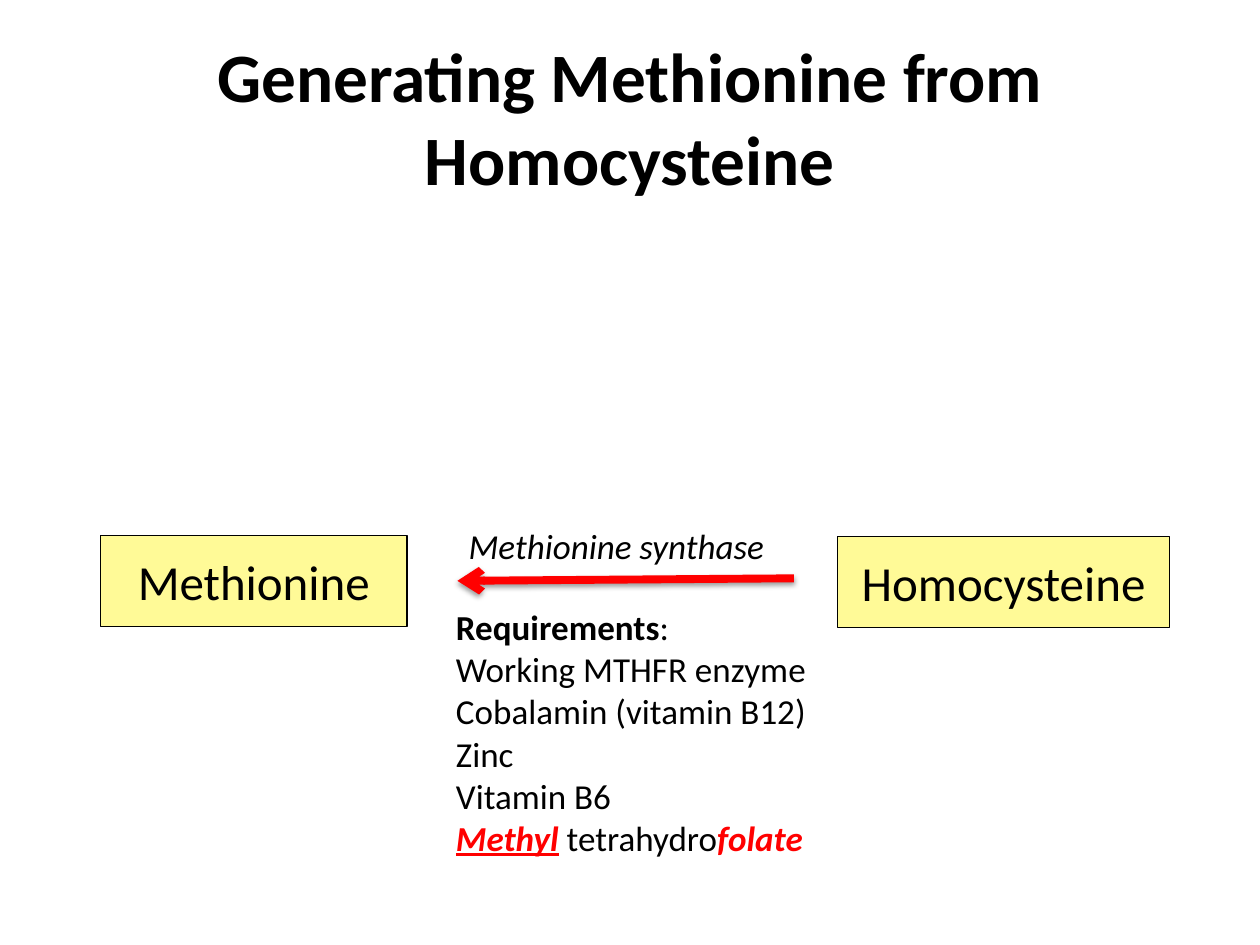
from lxml import etree
from pptx import Presentation
from pptx.dml.color import RGBColor
from pptx.enum.shapes import MSO_CONNECTOR, MSO_SHAPE
from pptx.enum.text import MSO_ANCHOR, PP_ALIGN
from pptx.oxml import parse_xml
from pptx.oxml.ns import nsdecls, qn
from pptx.util import Inches, Pt

BLACK = RGBColor(0x00, 0x00, 0x00)
RED = RGBColor(0xFF, 0x00, 0x00)
YELLOW = RGBColor(0xFF, 0xFA, 0x97)
RECT = MSO_SHAPE.RECTANGLE
STRAIGHT = MSO_CONNECTOR.STRAIGHT
LEFT, CENTER = PP_ALIGN.LEFT, PP_ALIGN.CENTER
TOP, MIDDLE = MSO_ANCHOR.TOP, MSO_ANCHOR.MIDDLE

TITLE = [[("Generating Methionine from Homocysteine", "b")]]
ENZYME = [[("Methionine synthase", "i")]]
REQUIREMENTS = [
    [("Requirements", "b"), (":", "")],
    [("Working MTHFR enzyme", "")],
    [("Cobalamin (vitamin B12)", "")],
    [("Zinc", "")],
    [("Vitamin B6", "")],
    [("Methyl", "biur"), (" tetrahydro", ""), ("folate", "bir")],
]
COMPOUNDS = [
    ("Methionine", (0.8, 4.25, 2.43, 0.72)),
    ("Homocysteine", (6.65, 4.26, 2.63, 0.72)),
]
ARROW = (6.3, 4.59, 3.63, 4.61)


def write(sp, lines, size, align=LEFT, anchor=TOP, wrap=True):
    tf = sp.text_frame
    tf.word_wrap = wrap
    tf.vertical_anchor = anchor
    for i, line in enumerate(lines):
        p = tf.add_paragraph() if i else tf.paragraphs[0]
        p.alignment = align
        for text, style in line:
            r = p.add_run()
            r.text = text
            r.font.name = "Calibri"
            r.font.size = Pt(size)
            r.font.bold = "b" in style
            r.font.italic = "i" in style
            r.font.underline = "u" in style
            r.font.color.rgb = RED if "r" in style else BLACK


def add_text(s, box, lines, size, **layout):
    write(s.shapes.add_textbox(*map(Inches, box)), lines, size, **layout)


def add_compound(s, name, box):
    sp = s.shapes.add_shape(RECT, *map(Inches, box))
    sp.shadow.inherit = False
    sp.fill.solid()
    sp.fill.fore_color.rgb = YELLOW
    sp.line.color.rgb = BLACK
    sp.line.width = Pt(0.75)
    write(sp, [[(name, "")]], 28, align=CENTER, anchor=MIDDLE)


def add_arrow(s, ends):
    line = s.shapes.add_connector(STRAIGHT, *map(Inches, ends))
    line.line.color.rgb = RED
    line.line.width = Pt(4.5)
    etree.SubElement(line.line._get_or_add_ln(), qn("a:tailEnd"), type="arrow")
    line._element.spPr.append(parse_xml(
        f'<a:effectLst {nsdecls("a")}>'
        f'<a:outerShdw blurRad="{Pt(3.1)}" dist="{Pt(1.6)}" dir="5400000" rotWithShape="0">'
        '<a:srgbClr val="000000"><a:alpha val="38000"/></a:srgbClr>'
        '</a:outerShdw></a:effectLst>'))


def main():
    prs = Presentation()
    prs.slide_width, prs.slide_height = Inches(10), Inches(7.5)
    s = prs.slides.add_slide(prs.slide_layouts[6])
    add_text(s, (0.5, 0.3, 9, 1.25), TITLE, 39.6, align=CENTER, anchor=MIDDLE)
    for name, box in COMPOUNDS:
        add_compound(s, name, box)
    add_arrow(s, ARROW)
    add_text(s, (3.52, 4.76, 3.12, 2.12), REQUIREMENTS, 20, wrap=False)
    add_text(s, (3.62, 4.11, 3.02, 0.44), ENZYME, 20)
    prs.save("out.pptx")


if __name__ == "__main__":
    main()
